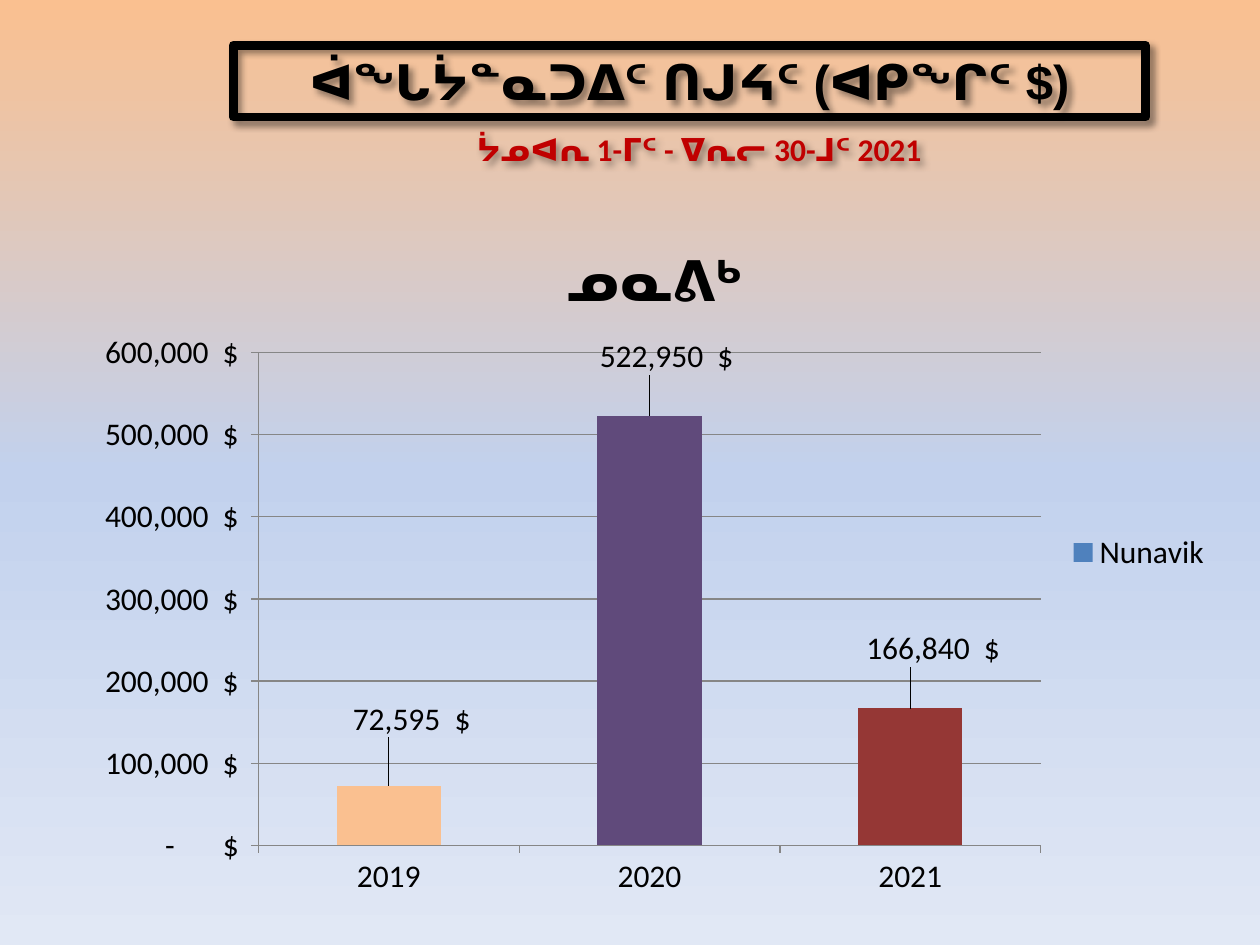
from copy import deepcopy
from dataclasses import dataclass

from lxml import etree
from pptx import Presentation
from pptx.chart.data import CategoryChartData
from pptx.dml.color import RGBColor
from pptx.enum.chart import XL_CHART_TYPE, XL_LABEL_POSITION, XL_LEGEND_POSITION, XL_TICK_MARK
from pptx.enum.text import MSO_ANCHOR, PP_ALIGN
from pptx.oxml import parse_xml
from pptx.oxml.ns import nsdecls, qn
from pptx.util import Cm, Pt

COLUMNS = XL_CHART_TYPE.COLUMN_CLUSTERED
OUTSIDE_END = XL_LABEL_POSITION.OUTSIDE_END
LEGEND_RIGHT = XL_LEGEND_POSITION.RIGHT
TICK_OUTSIDE = XL_TICK_MARK.OUTSIDE
CENTER = PP_ALIGN.CENTER
MIDDLE = MSO_ANCHOR.MIDDLE
TITLE_ONLY = 5


@dataclass(frozen=True)
class Theme:
    background: tuple = ((0, "FAC090"), (50, "C2D1ED"), (100, "E1E8F5"))
    text: str = "000000"
    period: str = "C00000"
    axis: str = "868686"
    series: str = "4F81BD"
    years: tuple = ("FAC090", "604A7B", "953735")
    heading_font: str = "Arial"
    body_font: str = "Calibri"
    heading_size: int = 28
    body_size: int = 18
    chart_title_size: int = 32


THEME = Theme()
DOLLARS = (r'_ * #,##0_)\ "$"_ ;_ * \(#,##0\)\ "$"_ ;'
           r'_ * "-"??_)\ "$"_ ;_ @_ ')
NUNAVIK = {"2019": 72595, "2020": 522950, "2021": 166840}
# Shift of each value label, as a share of the chart size
LABEL_SHIFTS = ((0.02, -0.06), (0.015, -0.05), (0.02, -0.05))


def style_font(font, name, size, color, bold=False):
    font.name, font.size, font.bold = name, Pt(size), bold
    font.color.rgb = RGBColor.from_string(color)


def place(shape, box):
    shape.left, shape.top, shape.width, shape.height = (Cm(length) for length in box)


def add_shadow(shape):
    shape._element.spPr.append(parse_xml(
        f'<a:effectLst {nsdecls("a")}><a:outerShdw blurRad="50800" dist="38100" '
        'dir="2700000" algn="tl" rotWithShape="0"><a:srgbClr val="000000">'
        '<a:alpha val="40000"/></a:srgbClr></a:outerShdw></a:effectLst>'))


def manual_layout(inner=False, **fractions):
    layout = etree.Element(qn("c:layout"))
    manual = etree.SubElement(layout, qn("c:manualLayout"))
    if inner:
        etree.SubElement(manual, qn("c:layoutTarget"), val="inner")
    if inner or fractions.pop("edge", False):
        for mode in ("xMode", "yMode"):
            etree.SubElement(manual, qn(f"c:{mode}"), val="edge")
    for key, value in fractions.items():
        etree.SubElement(manual, qn(f"c:{key}"), val=str(value))
    return layout


def set_layout(parent, layout, after):
    for old in parent.findall(qn("c:layout")):
        parent.remove(old)
    if after is None:
        parent.insert(0, layout)
    else:
        parent.find(qn(after)).addnext(layout)


def paint_background(slide):
    fill = slide.background.fill
    fill.gradient()
    fill.gradient_angle = 270  # top to bottom
    stops = slide._element.find(".//" + qn("a:gsLst"))
    stops.insert(1, deepcopy(stops[0]))
    for stop, (position, color) in zip(fill.gradient_stops, THEME.background):
        stop.position = position / 100
        stop.color.rgb = RGBColor.from_string(color)


def write_line(shape, text, font_name, size, color):
    frame = shape.text_frame
    frame.word_wrap = True
    frame.vertical_anchor = MIDDLE
    paragraph = frame.paragraphs[0]
    paragraph.text = text
    paragraph.alignment = CENTER
    style_font(paragraph.font, font_name, size, color, bold=True)
    add_shadow(shape)


def add_heading(slide, box):
    left, top, width, height = box
    # Framed title
    title = slide.shapes.title
    place(title, (left, top, width, height))
    title.line.color.rgb = RGBColor.from_string(THEME.text)
    title.line.width = Pt(5)
    write_line(title, "ᐋᖓᔮᓐᓇᑐᐃᑦ ᑎᒍᔦᑦ (ᐊᑭᖏᑦ $)",
               THEME.heading_font, THEME.heading_size, THEME.text)
    # Period covered
    period = slide.shapes.add_textbox(0, 0, 0, 0)
    place(period, (left + 0.2, top + height + 0.13, width, 1.02))
    write_line(period, "ᔮᓄᐊᕆ 1-ᒥᑦ - ᐁᕆᓕ 30-ᒧᑦ 2021",
               THEME.body_font, THEME.body_size, THEME.period)


def format_axis(axis):
    axis.major_tick_mark = TICK_OUTSIDE
    axis.format.line.color.rgb = RGBColor.from_string(THEME.axis)


def format_series(series):
    series.format.fill.solid()
    series.format.fill.fore_color.rgb = RGBColor.from_string(THEME.series)
    labels = series.data_labels
    labels.show_value = True
    labels.number_format, labels.number_format_is_linked = DOLLARS, False
    labels.position = OUTSIDE_END
    for index, (color, (x, y)) in enumerate(zip(THEME.years, LABEL_SHIFTS)):
        point = series.points[index]
        point.format.fill.solid()
        point.format.fill.fore_color.rgb = RGBColor.from_string(color)
        point.data_label.position = OUTSIDE_END
        label = labels._element.findall(qn("c:dLbl"))[index]
        set_layout(label, manual_layout(x=x, y=y), "c:idx")


def add_revenue_chart(slide, box):
    data = CategoryChartData(number_format=DOLLARS)
    data.categories = list(NUNAVIK)
    data.add_series("Nunavik", list(NUNAVIK.values()))
    chart = slide.shapes.add_chart(COLUMNS, *(Cm(length) for length in box), data).chart
    style_font(chart.font, THEME.body_font, THEME.body_size, THEME.text)

    # Title and legend
    chart.has_title = True
    paragraph = chart.chart_title.text_frame.paragraphs[0]
    paragraph.text = "ᓄᓇᕕᒃ"
    style_font(paragraph.font, THEME.body_font, THEME.chart_title_size, THEME.text, bold=True)
    set_layout(chart.chart_title._element, manual_layout(edge=True, x=0.42, y=0.05), "c:tx")
    chart.has_legend = True
    chart.legend.position = LEGEND_RIGHT
    chart.legend.include_in_layout = False

    # Axes
    format_axis(chart.category_axis)
    values = chart.value_axis
    format_axis(values)
    values.minimum_scale, values.maximum_scale, values.major_unit = 0, 600000, 100000
    values.tick_labels.number_format = DOLLARS
    values.tick_labels.number_format_is_linked = False
    values.major_gridlines.format.line.color.rgb = RGBColor.from_string(THEME.axis)

    # Columns
    plot = chart.plots[0]
    plot.gap_width = 150
    plot.vary_by_categories = False
    format_series(plot.series[0])
    plot_area = chart._chartSpace.find(".//" + qn("c:plotArea"))
    set_layout(plot_area, manual_layout(inner=True, x=0.16, y=0.22, w=0.68, h=0.69), None)


def main():
    presentation = Presentation()
    presentation.slide_width, presentation.slide_height = Cm(25.4), Cm(19.05)
    slide = presentation.slides.add_slide(presentation.slide_layouts[TITLE_ONLY])
    paint_background(slide)
    add_revenue_chart(slide, (1.5, 3.94, 23.19, 14.4))
    add_heading(slide, (4.7, 0.91, 18.39, 1.45))
    presentation.save("out.pptx")


if __name__ == "__main__":
    main()
